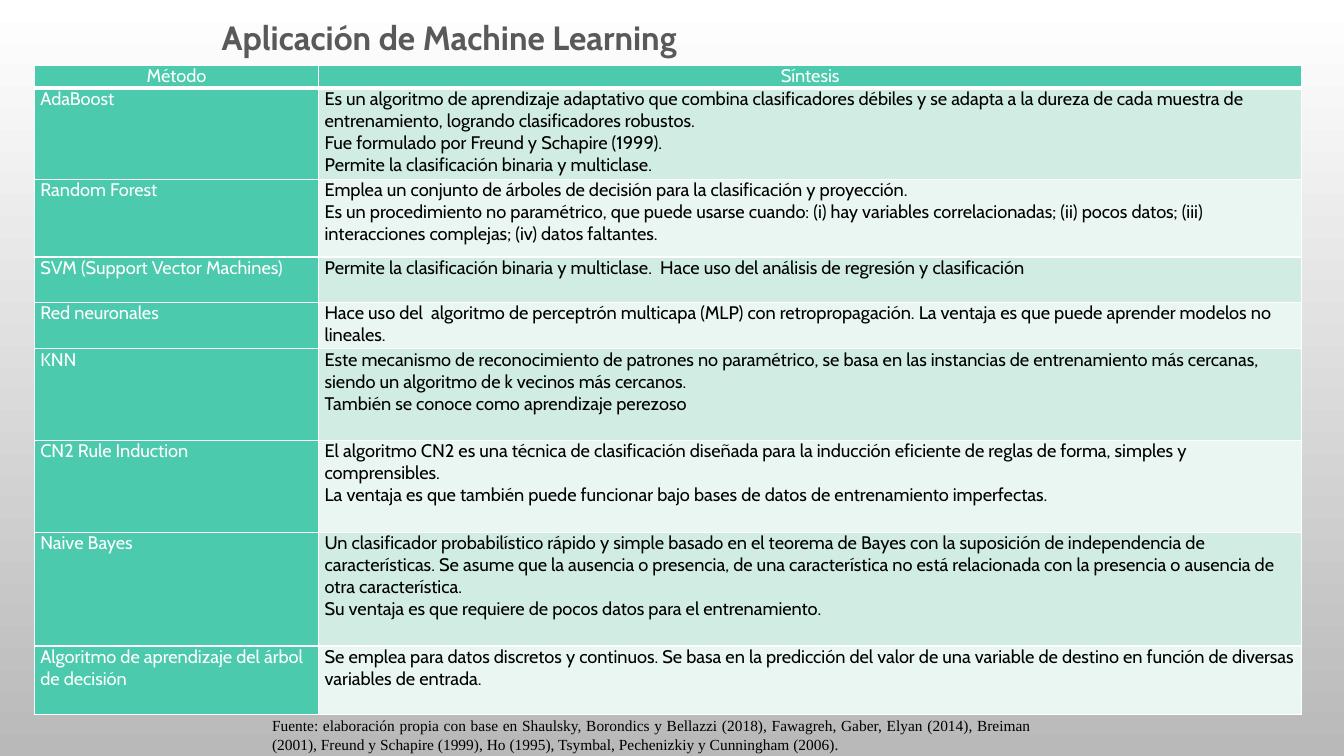
import dataclasses

import lxml.etree
import pptx
import pptx.dml.color
import pptx.enum.text
import pptx.oxml.ns
import pptx.util

Inches = pptx.util.Inches
Pt = pptx.util.Pt
ALIGN = pptx.enum.text.PP_ALIGN


def rgb(code):
    return pptx.dml.color.RGBColor.from_string(code)


@dataclasses.dataclass(frozen=True)
class Theme:
    sans: str = "Cabin"
    serif: str = "Times New Roman"
    white: str = "FFFFFF"
    black: str = "000000"
    gray: str = "595959"
    shade: str = "B9B9B9"
    green: str = "4BCAAD"
    bands: tuple = ("D0ECE3", "E9F6F1")
    title: float = 24
    body: float = 13
    note: float = 11


@dataclasses.dataclass
class Deck:
    theme: Theme
    slide: object

    def back(self):
        fill = self.slide.background.fill
        fill.gradient()
        fill.gradient_angle = 270
        for stop, code in zip(fill.gradient_stops, (self.theme.white, self.theme.shade)):
            stop.color.rgb = rgb(code)

    def put(self, frame, lines, color, font, layout=None):
        """Fill a text frame with one paragraph per line."""
        frame.text = "\n".join(lines)
        for para in frame.paragraphs:
            for name, value in (layout or {}).items():
                setattr(para, name, value)
            for run in para.runs:
                for name, value in font.items():
                    setattr(run.font, name, value)
                run.font.color.rgb = rgb(color)

    def text(self, box, line, color, font, layout=None):
        frame = self.slide.shapes.add_textbox(*map(Inches, box)).text_frame
        frame.word_wrap = True
        self.put(frame, [line], color, font, layout)

    def edge(self, cell, base):
        """Draw white cell borders; base is the width of the lower one."""
        props = cell._tc.get_or_add_tcPr()
        widths = {"lnL": 1, "lnR": 1, "lnT": 1, "lnB": base}
        for spot, (tag, width) in enumerate(widths.items()):
            line = lxml.etree.Element(pptx.oxml.ns.qn("a:" + tag), w=str(Pt(width)))
            fill = lxml.etree.SubElement(line, pptx.oxml.ns.qn("a:solidFill"))
            lxml.etree.SubElement(fill, pptx.oxml.ns.qn("a:srgbClr"), val=self.theme.white)
            props.insert(spot, line)

    def cell(self, cell, lines, fill, color, head):
        margins = {"margin_left": 0.06, "margin_right": 0.06,
                   "margin_top": 0, "margin_bottom": 0}
        for name, value in margins.items():
            setattr(cell, name, Inches(value))
        cell.fill.solid()
        cell.fill.fore_color.rgb = rgb(fill)
        self.edge(cell, 3 if head else 1)
        font = {"name": self.theme.sans, "size": Pt(self.theme.body), "bold": False}
        layout = {"alignment": ALIGN.CENTER if head else ALIGN.LEFT}
        self.put(cell.text_frame, lines, color, font, layout)

    def table(self, box, widths, heights, rows):
        look = self.theme
        shape = self.slide.shapes.add_table(len(rows), len(widths), *map(Inches, box))
        grid = shape.table
        for col, width in zip(grid.columns, widths):
            col.width = Inches(width)
        for row, height in zip(grid.rows, heights):
            row.height = Inches(height)
        for i, (label, *lines) in enumerate(rows):
            head = i == 0
            fill = look.green if head else look.bands[(i - 1) % 2]
            color = look.white if head else look.black
            self.cell(grid.cell(i, 0), [label], look.green, look.white, head)
            self.cell(grid.cell(i, 1), lines, fill, color, head)


ROWS = [
    ("Método", "Síntesis"),
    ("AdaBoost",
     "Es un algoritmo de aprendizaje adaptativo que combina clasificadores débiles y se adapta "
     "a la dureza de cada muestra de entrenamiento, logrando clasificadores robustos.",
     "Fue formulado por Freund y Schapire (1999).",
     "Permite la clasificación binaria y multiclase."),
    ("Random Forest",
     "Emplea un conjunto de árboles de decisión para la clasificación y proyección.",
     "Es un procedimiento no paramétrico, que puede usarse cuando: (i) hay variables "
     "correlacionadas; (ii) pocos datos; (iii) interacciones complejas; (iv) datos faltantes."),
    ("SVM (Support Vector Machines)",
     "Permite la clasificación binaria y multiclase.  Hace uso del análisis de regresión "
     "y clasificación"),
    ("Red neuronales",
     "Hace uso del  algoritmo de perceptrón multicapa (MLP) con retropropagación. "
     "La ventaja es que puede aprender modelos no lineales."),
    ("KNN",
     "Este mecanismo de reconocimiento de patrones no paramétrico, se basa en las instancias "
     "de entrenamiento más cercanas, siendo un algoritmo de k vecinos más cercanos.",
     "También se conoce como aprendizaje perezoso"),
    ("CN2 Rule Induction",
     "El algoritmo CN2 es una técnica de clasificación diseñada para la inducción eficiente "
     "de reglas de forma, simples y comprensibles.",
     "La ventaja es que también puede funcionar bajo bases de datos de entrenamiento "
     "imperfectas."),
    ("Naive Bayes",
     "Un clasificador probabilístico rápido y simple basado en el teorema de Bayes con la "
     "suposición de independencia de características. Se asume que la ausencia o presencia, "
     "de una característica no está relacionada con la presencia o ausencia de otra "
     "característica.",
     "Su ventaja es que requiere de pocos datos para el entrenamiento."),
    ("Algoritmo de aprendizaje del árbol de decisión",
     "Se emplea para datos discretos y continuos. Se basa en la predicción del valor de una "
     "variable de destino en función de diversas variables de entrada."),
]
HEIGHTS = (0.22, 0.91, 0.77, 0.45, 0.46, 0.91, 0.91, 1.13, 0.68)
SOURCE = (
    "Fuente: elaboración propia con base en Shaulsky, Borondics y Bellazzi (2018), Fawagreh, "
    "Gaber, Elyan (2014), Breiman (2001), Freund y Schapire (1999), Ho (1995), Tsymbal, "
    "Pechenizkiy y Cunningham (2006)."
)


def main():
    show = pptx.Presentation()
    show.slide_width, show.slide_height = Inches(13.33), Inches(7.5)
    look = Theme()
    deck = Deck(look, show.slides.add_slide(show.slide_layouts[6]))
    deck.back()
    deck.text((2.1, 0.12, 7.19, 0.5), "Aplicación de Machine Learning", look.gray,
              {"name": look.sans, "size": Pt(look.title), "bold": True})
    deck.table((0.34, 0.65, 12.57, 6.44), (2.82, 9.75), HEIGHTS, ROWS)
    deck.text((2.6, 7.06, 7.73, 0.47), SOURCE, look.black,
              {"name": look.serif, "size": Pt(look.note)},
              {"alignment": ALIGN.JUSTIFY, "space_after": Pt(10)})
    show.save("out.pptx")


if __name__ == "__main__":
    main()
